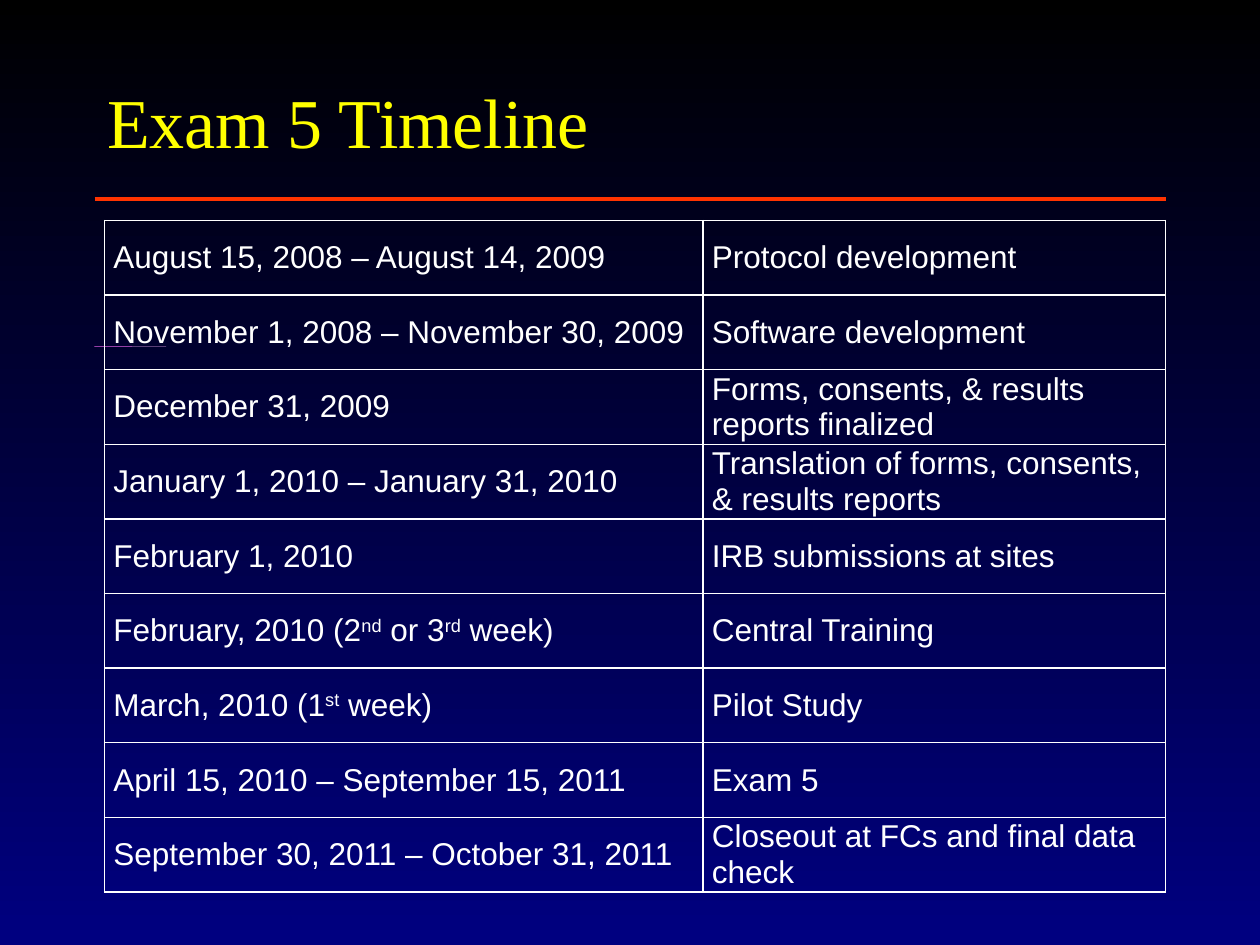
from lxml.etree import SubElement as sub
from pptx import Presentation
from pptx.dml.color import RGBColor
from pptx.enum.shapes import MSO_CONNECTOR as LINE, MSO_SHAPE as SHAPE
from pptx.enum.text import MSO_ANCHOR as ANCHOR, PP_ALIGN as ALIGN
from pptx.oxml.ns import qn
from pptx.util import Inches, Pt

TITLE = "Exam 5 Timeline"
# Text between carets is raised.
ROWS = [
    ("August 15, 2008 – August 14, 2009", "Protocol development"),
    ("November 1, 2008 – November 30, 2009", "Software development"),
    ("December 31, 2009", "Forms, consents, & results reports finalized"),
    ("January 1, 2010 – January 31, 2010",
     "Translation of forms, consents, & results reports"),
    ("February 1, 2010", "IRB submissions at sites"),
    ("February, 2010 (2^nd^ or 3^rd^ week)", "Central Training"),
    ("March, 2010 (1^st^ week)", "Pilot Study"),
    ("April 15, 2010 – September 15, 2011", "Exam 5"),
    ("September 30, 2011 – October 31, 2011",
     "Closeout at FCs and final data check"),
]
COLS = [4.75, 3.67]
HIGH = 5.33
BARS = [(0.3, "FF00FF"), (0.57, "FFB3FF")]
SKY = ["000000", "000080"]


def rgb(code):
    return RGBColor.from_string(code)


def style(font, name, size, color):
    font.name, font.size = name, Pt(size)
    font.color.rgb = rgb(color)


def border(cell, color="FFFFFF", width=1):
    props = cell._tc.get_or_add_tcPr()
    for side in ("lnL", "lnR", "lnT", "lnB"):
        line = sub(props, qn("a:" + side), w=str(Pt(width)))
        fill = sub(line, qn("a:solidFill"))
        sub(fill, qn("a:srgbClr"), val=color)


def write(cell, text):
    border(cell)
    cell.fill.background()
    cell.vertical_anchor = ANCHOR.MIDDLE
    cell.margin_left = cell.margin_right = Inches(0.07)
    cell.margin_top = cell.margin_bottom = 0
    para = cell.text_frame.paragraphs[0]
    style(para.font, "Arial", 18, "FFFFFF")
    for i, part in enumerate(text.split("^")):
        run = para.add_run()
        run.text = part
        if i % 2:
            run._r.get_or_add_rPr().set("baseline", "30000")


prs = Presentation()
prs.slide_width, prs.slide_height = Inches(10), Inches(7.5)
slide = prs.slides.add_slide(prs.slide_layouts[5])
shapes = slide.shapes

back = slide.background.fill
back.gradient()
back.gradient_angle = 270
for stop, color, place in zip(back.gradient_stops, SKY, (0, 1)):
    stop.color.rgb = rgb(color)
    stop.position = place

title = shapes.title
title.left, title.top = Inches(0.75), Inches(0.33)
title.width, title.height = Inches(8.5), Inches(1.25)
title.text_frame.text = TITLE
title.text_frame.vertical_anchor = ANCHOR.MIDDLE
head = title.text_frame.paragraphs[0]
head.alignment = ALIGN.LEFT
style(head.font, "Times New Roman", 40, "FFFF00")

rule = shapes.add_connector(
    LINE.STRAIGHT, Inches(0.75), Inches(1.58), Inches(9.25), Inches(1.58))
rule.line.color.rgb = rgb("FF3300")
rule.line.width = Pt(2)
sub(rule._element.spPr, qn("a:effectLst"))

for wide, color in BARS:
    bar = shapes.add_shape(
        SHAPE.RECTANGLE, Inches(0.75), Inches(2.75), Inches(wide), 0)
    bar.shadow.inherit = False
    bar.fill.solid()
    bar.fill.fore_color.rgb = rgb(color)
    bar.line.fill.background()

table = shapes.add_table(
    len(ROWS), len(COLS), Inches(0.83), Inches(1.75),
    Inches(sum(COLS)), Inches(HIGH)).table
table.first_row = table.horz_banding = False
for col, wide in zip(table.columns, COLS):
    col.width = Inches(wide)
for r, row in enumerate(ROWS):
    for c, text in enumerate(row):
        write(table.cell(r, c), text)

prs.save("out.pptx")
